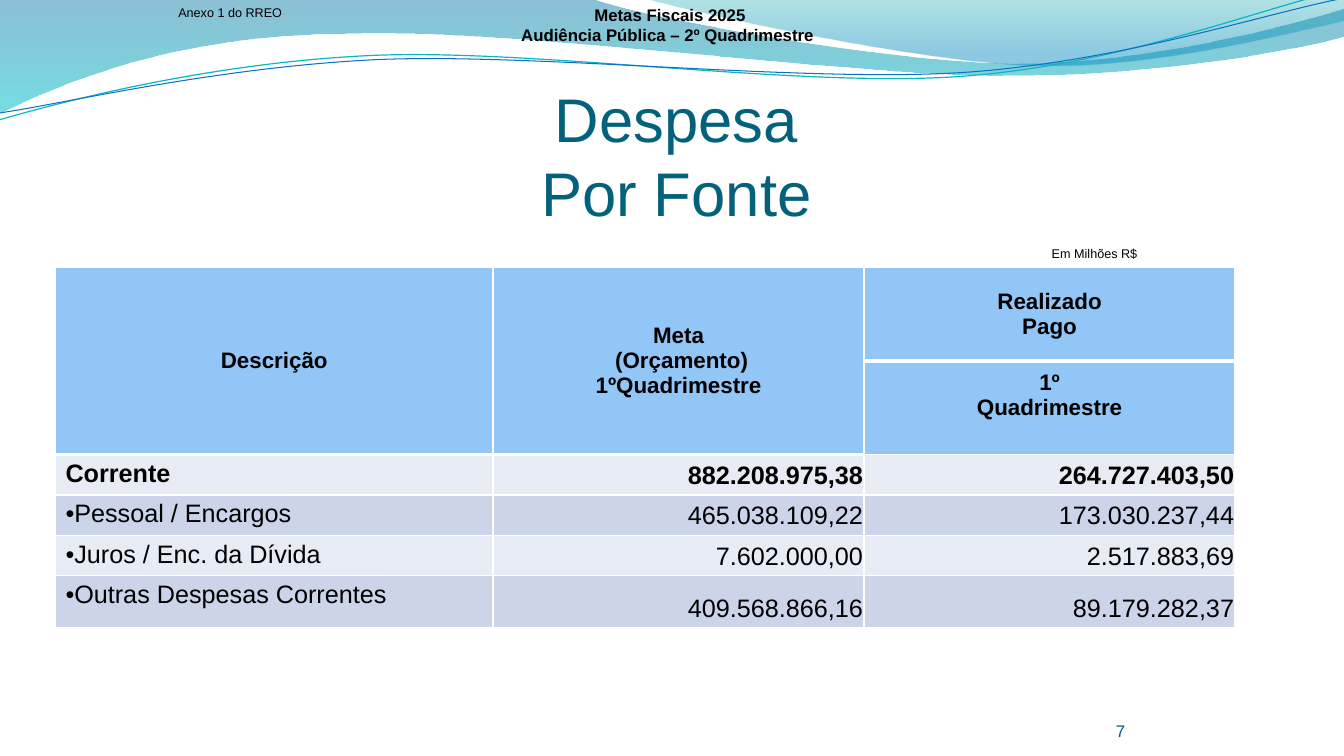
from lxml import etree
from pptx import Presentation
from pptx.dml.color import RGBColor
from pptx.enum import text
from pptx.oxml import ns
from pptx.util import Inches, Pt

LEFT, CENTER, RIGHT = text.PP_ALIGN.LEFT, text.PP_ALIGN.CENTER, text.PP_ALIGN.RIGHT
TOP, MIDDLE, BOTTOM = text.MSO_ANCHOR.TOP, text.MSO_ANCHOR.MIDDLE, text.MSO_ANCHOR.BOTTOM
BLACK, WHITE = "000000", "FFFFFF"
HEADER_FILL, BAND_FILLS = "91C6F7", ("E7EBF4", "CCD4EA")
INSETS = (0.1, 0.05, 0.1, 0.05)
NUMBER_INSETS = (0.01, 0.05, 0.01, 0.05)

# Each step: two values for a straight line, six for a Bezier curve
# Each gradient stop: position, colour, opacity (percent)
BANDS = [
    ([(0, -0.01), (5.87, -0.01), (6.34, 0.17, 8.85, 0.63, 10.11, 0.63),
      (11.37, 0.63, 12.78, 0.26, 13.33, 0.09), (13.35, 0.36),
      (13.11, 0.44, 11.6, 0.76, 9.94, 0.75), (8.29, 0.75, 5.09, 0.28, 3.43, 0.34),
      (1.72, 0.35, 0.61, 0.83, -0.01, 1.13)],
     [(0, "0074A0", 45), (100, "00C4CD", 55)], 90),
    ([(6.39, -0.01), (6.79, 0.11, 9.09, 0.62, 10.25, 0.65),
      (11.41, 0.69, 12.82, 0.32, 13.33, 0.21), (13.33, 0)],
     [(20, "008ABF", 45), (100, "00A0A8", 30)], 270),
]
WAVES = [
    ([(-0.01, 1.19), (0.64, 1, 2.11, 0.62, 3.69, 0.55),
      (5.27, 0.48, 7.89, 0.87, 9.5, 0.76), (11.1, 0.65, 12.51, 0.08, 13.31, -0.1)],
     "09B7BF", 0.85),
    ([(0, 1.12), (0.63, 1.03, 2.18, 0.66, 3.78, 0.59),
      (5.37, 0.53, 7.96, 0.82, 9.55, 0.72), (11.15, 0.61, 12.55, 0.13, 13.34, -0.02)],
     "0F6FC6", 0.75),
]

# Text, box, size, colour, bold, alignment, anchor, insets
LABELS = [
    ("Despesa\vPor Fonte", (2.21, 1.02, 9, 1.25), 44, "04617B", False, CENTER, BOTTOM,
     (0, 0.05, 0, 0)),
    ("7", (10.33, 6.95, 0.83, 0.4), 12, "035C75", False, RIGHT, BOTTOM, (0, 0, 0, 0)),
    ("Em Milhões R$", (10.33, 2.39, 1.05, 0.25), 9, BLACK, False, CENTER, TOP, INSETS),
    ("Anexo 1 do RREO", (1.67, 0, 1.35, 0.25), 9, BLACK, False, LEFT, TOP, INSETS),
    ("Metas Fiscais 2025\nAudiência Pública – 2º Quadrimestre ", (4.95, 0, 3.39, 0.5), 12,
     BLACK, True, CENTER, MIDDLE, INSETS),
]

HEADERS = [
    ["Descrição", "Meta\n (Orçamento)\n1ºQuadrimestre", "Realizado\nPago"],
    ["", "", "1º\n Quadrimestre "],
]
EXPENSES = [
    ("Corrente", "882.208.975,38", "264.727.403,50"),
    ("Pessoal / Encargos", "465.038.109,22", "173.030.237,44"),
    ("Juros / Enc. da Dívida", "7.602.000,00", "2.517.883,69"),
    ("Outras Despesas Correntes", "409.568.866,16", "89.179.282,37"),
]
TABLE_AT = (0.55, 2.65)
COLUMNS = [4.34, 3.68, 3.68]
ROWS = [0.93, 0.93, 0.4, 0.4, 0.4, 0.52]


def rgb(value):
    return RGBColor.from_string(value)


def child(parent, tag, **attrs):
    return etree.SubElement(parent, ns.qn(tag), {k: str(v) for k, v in attrs.items()})


def format_text(tf, size, colour, bold, align):
    for p in tf.paragraphs:
        p.alignment = align
        for r in p.runs:
            r.font.name = "Arial"
            r.font.size = Pt(size)
            r.font.bold = bold
            r.font.color.rgb = rgb(colour)


def set_insets(target, insets):
    (target.margin_left, target.margin_top,
     target.margin_right, target.margin_bottom) = map(Inches, insets)


def add_outline(slide, steps, close):
    """Draw straight segments through the step ends, then bend the curved ones."""
    ends = [(Inches(step[-2]), Inches(step[-1])) for step in steps]
    builder = slide.shapes.build_freeform(*ends[0], scale=1.0)
    builder.add_line_segments(ends[1:], close=close)
    s = builder.convert_to_shape()
    s.shadow.inherit = False
    segments = list(s._element.iter(ns.qn("a:lnTo")))
    for segment, step in zip(segments, steps[1:]):
        if len(step) == 6:
            curve = etree.Element(ns.qn("a:cubicBezTo"))
            for x, y in zip(step[::2], step[1::2]):
                child(curve, "a:pt", x=Inches(x) - s.left, y=Inches(y) - s.top)
            segment.getparent().replace(segment, curve)
    return s


def add_band(slide, steps, stops, angle):
    s = add_outline(slide, steps, True)
    s.line.fill.background()
    s.fill.gradient()
    grad = s._element.spPr.find(ns.qn("a:gradFill"))
    for old in list(grad):
        grad.remove(old)
    stop_list = child(grad, "a:gsLst")
    for position, colour, opacity in stops:
        stop = child(stop_list, "a:gs", pos=position * 1000)
        child(child(stop, "a:srgbClr", val=colour), "a:alpha", val=opacity * 1000)
    child(grad, "a:lin", ang=angle * 60000, scaled=0)


def add_wave(slide, steps, colour, width):
    s = add_outline(slide, steps, False)
    s.fill.background()
    s.line.color.rgb = rgb(colour)
    s.line.width = Pt(width)


def add_label(slide, words, box, size, colour, bold, align, anchor, insets):
    tf = slide.shapes.add_textbox(*map(Inches, box)).text_frame
    tf.word_wrap = True
    tf.vertical_anchor = anchor
    set_insets(tf, insets)
    tf.text = words
    format_text(tf, size, colour, bold, align)


def set_borders(cell, top, bottom):
    tc_pr = cell._tc.get_or_add_tcPr()
    for side, width in (("L", 0.96), ("R", 0.96), ("T", top), ("B", bottom)):
        ln = child(tc_pr, f"a:ln{side}", w=Pt(width))
        child(child(ln, "a:solidFill"), "a:srgbClr", val=WHITE)


def add_bullet(p):
    p_pr = p._p.get_or_add_pPr()
    p_pr.set("marL", "0")
    p_pr.set("indent", "0")
    child(p_pr, "a:buFont", typeface="Arial")
    child(p_pr, "a:buChar", char="•")


def add_expense_table(slide):
    table = slide.shapes.add_table(
        len(ROWS), len(COLUMNS), *map(Inches, (*TABLE_AT, sum(COLUMNS), sum(ROWS)))).table
    table.first_row = table.horz_banding = False
    for column, width in zip(table.columns, COLUMNS):
        column.width = Inches(width)
    for row, height in zip(table.rows, ROWS):
        row.height = Inches(height)
    for c in (0, 1):
        table.cell(0, c).merge(table.cell(1, c))

    for r, values in enumerate(HEADERS + EXPENSES):
        header = r < len(HEADERS)
        for c, value in enumerate(values):
            cell = table.cell(r, c)
            heavy_row = 0 if c == 2 else 1
            merged_header = header and c < 2
            set_borders(cell, 3 if r == heavy_row + 1 else 0.96,
                        3 if r == heavy_row or merged_header else 0.96)
            cell.fill.solid()
            cell.fill.fore_color.rgb = rgb(HEADER_FILL if header else BAND_FILLS[r % 2])
            cell.text = value
            if header:
                anchor, align, insets = MIDDLE, CENTER, INSETS
                if r == 1:
                    insets = (0.1, 0.05, 0.1, 0.3)
            elif c == 0:
                anchor, align, insets = TOP, LEFT, INSETS
            else:
                anchor, align, insets = BOTTOM, RIGHT, NUMBER_INSETS
            cell.vertical_anchor = anchor
            set_insets(cell, insets)
            if c == 0 and r > len(HEADERS):
                add_bullet(cell.text_frame.paragraphs[0])
            format_text(cell.text_frame, 16 if header else 18, BLACK,
                        r <= len(HEADERS), align)


def main():
    prs = Presentation()
    prs.slide_width, prs.slide_height = Inches(13.33), Inches(7.5)
    slide = prs.slides.add_slide(prs.slide_layouts[6])
    for band in BANDS:
        add_band(slide, *band)
    for wave in WAVES:
        add_wave(slide, *wave)
    for label in LABELS:
        add_label(slide, *label)
    add_expense_table(slide)
    prs.save("out.pptx")


if __name__ == "__main__":
    main()
